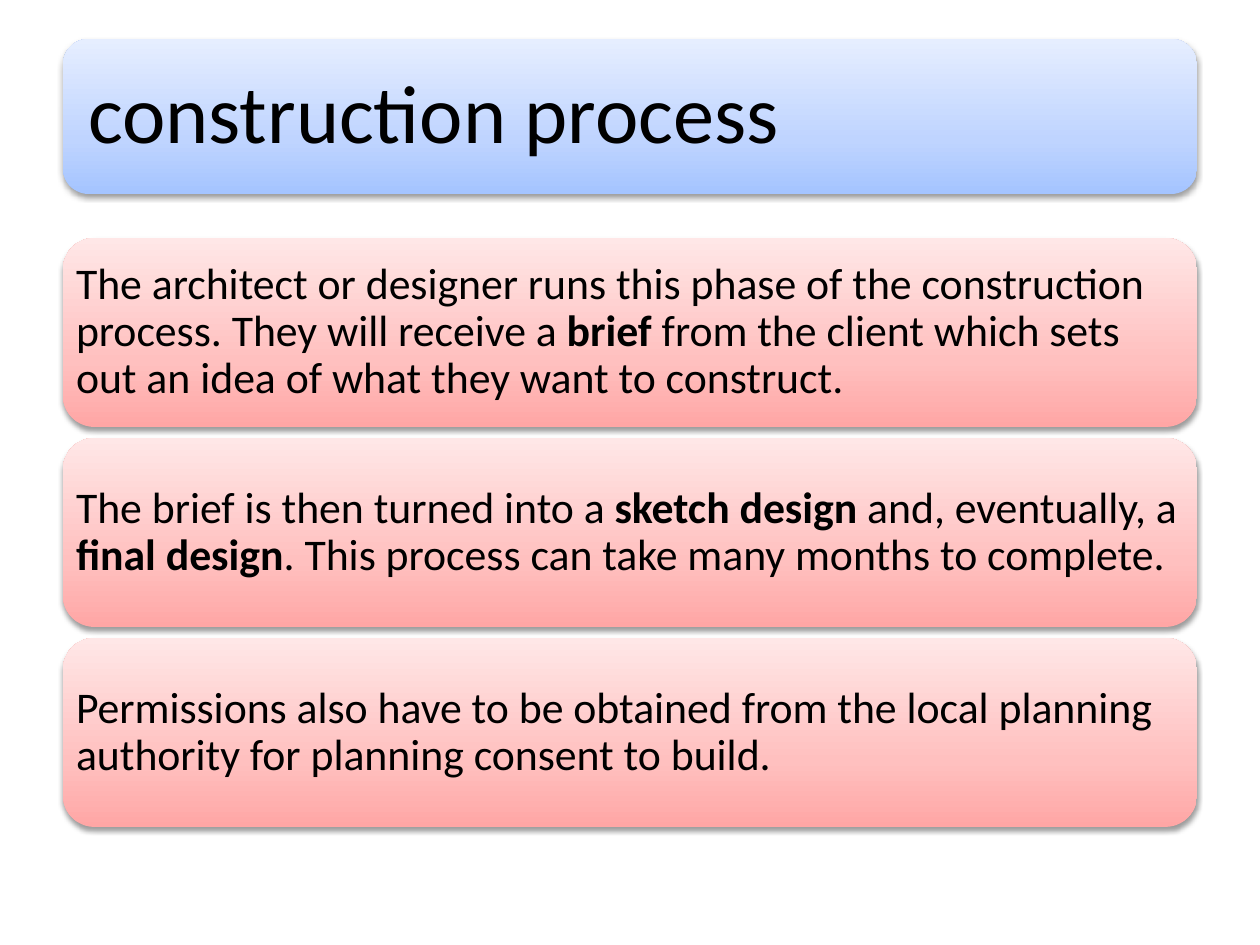
"""Build the construction process slide: a title banner above three text panels."""
import pptx
import pptx.dml.color
import pptx.enum.shapes
import pptx.enum.text
import pptx.oxml
import pptx.oxml.ns
import pptx.util

PX = 914400 / 126
COLORS = {
    "text": "000000",
    "shadow": "000000",
    "banner": ("A4C4FF", "BFD4FF", "E6EEFF"),
    "panel": ("FFA6A5", "FFC0BF", "FFE7E7"),
}
STOPS = (0, 35, 100)
FONT = "Calibri"
LEFT, WIDTH = 63, 1134
BANNER_TOP, BANNER_HEIGHT = 39, 155
PANEL_TOP, PANEL_HEIGHT, PANEL_PITCH = 238, 189, 200
CORNER = 0.1667
CORNER_INSET = 0.29

BANNER_RUNS = [("construction process", False)]
PANELS = [
    [
        ("The architect or designer runs this phase of the construction process. "
         "They will receive a ", False),
        ("brief", True),
        (" from the client which sets out an idea of what they want to construct.", False),
    ],
    [
        ("The brief is then turned into a ", False),
        ("sketch design ", True),
        ("and, eventually, a ", False),
        ("final design", True),
        (". This process can take many months to complete.", False),
    ],
    [
        ("Permissions also have to be obtained from the local planning authority "
         "for planning consent to build.", False),
    ],
]


def px(n):
    return pptx.util.Emu(round(n * PX))


def xml(tag, body):
    ns = pptx.oxml.ns.nsdecls("a")
    name = tag.split()[0]
    return pptx.oxml.parse_xml(f"<a:{tag} {ns}>{body}</a:{name}>")


def add_gradient(sp, colors):
    stops = "".join(
        f'<a:gs pos="{pos * 1000}"><a:srgbClr val="{color}"/></a:gs>'
        for pos, color in zip(STOPS, colors)
    )
    body = f'<a:gsLst>{stops}</a:gsLst><a:lin ang="16200000" scaled="1"/>'
    sp.element.spPr.append(xml('gradFill rotWithShape="1"', body))


def add_shadow(sp):
    sp.shadow.inherit = False
    effects = sp.element.spPr.find(pptx.oxml.ns.qn("a:effectLst"))
    body = f'<a:srgbClr val="{COLORS["shadow"]}"><a:alpha val="38000"/></a:srgbClr>'
    tag = 'outerShdw blurRad="40000" dist="20000" dir="5400000" rotWithShape="0"'
    effects.append(xml(tag, body))


def add_runs(tf, runs, size):
    p = tf.paragraphs[0]
    p.alignment = pptx.enum.text.PP_ALIGN.LEFT
    p.line_spacing = 0.9
    for text, bold in runs:
        r = p.add_run()
        r.text = text
        r.font.name = FONT
        r.font.size = pptx.util.Pt(size)
        r.font.bold = bold
        r.font.color.rgb = pptx.dml.color.RGBColor.from_string(COLORS["text"])


def add_panel(s, top, height, colors, runs, size, inset):
    shape = pptx.enum.shapes.MSO_SHAPE.ROUNDED_RECTANGLE
    sp = s.shapes.add_shape(shape, px(LEFT), px(top), px(WIDTH), px(height))
    sp.adjustments[0] = CORNER
    add_gradient(sp, colors)
    sp.line.fill.background()
    add_shadow(sp)
    tf = sp.text_frame
    tf.word_wrap = True
    tf.vertical_anchor = pptx.enum.text.MSO_ANCHOR.MIDDLE
    margin = px(inset - CORNER_INSET * CORNER * height)
    tf.margin_left = tf.margin_right = tf.margin_top = tf.margin_bottom = margin
    add_runs(tf, runs, size)


def main():
    prs = pptx.Presentation()
    prs.slide_width, prs.slide_height = px(1260), px(945)
    s = prs.slides.add_slide(prs.slide_layouts[6])
    add_panel(s, BANNER_TOP, BANNER_HEIGHT, COLORS["banner"], BANNER_RUNS, 47, 25)
    for i, runs in enumerate(PANELS):
        top = PANEL_TOP + i * PANEL_PITCH
        add_panel(s, top, PANEL_HEIGHT, COLORS["panel"], runs, 25, 13)
    prs.save("out.pptx")


if __name__ == "__main__":
    main()
